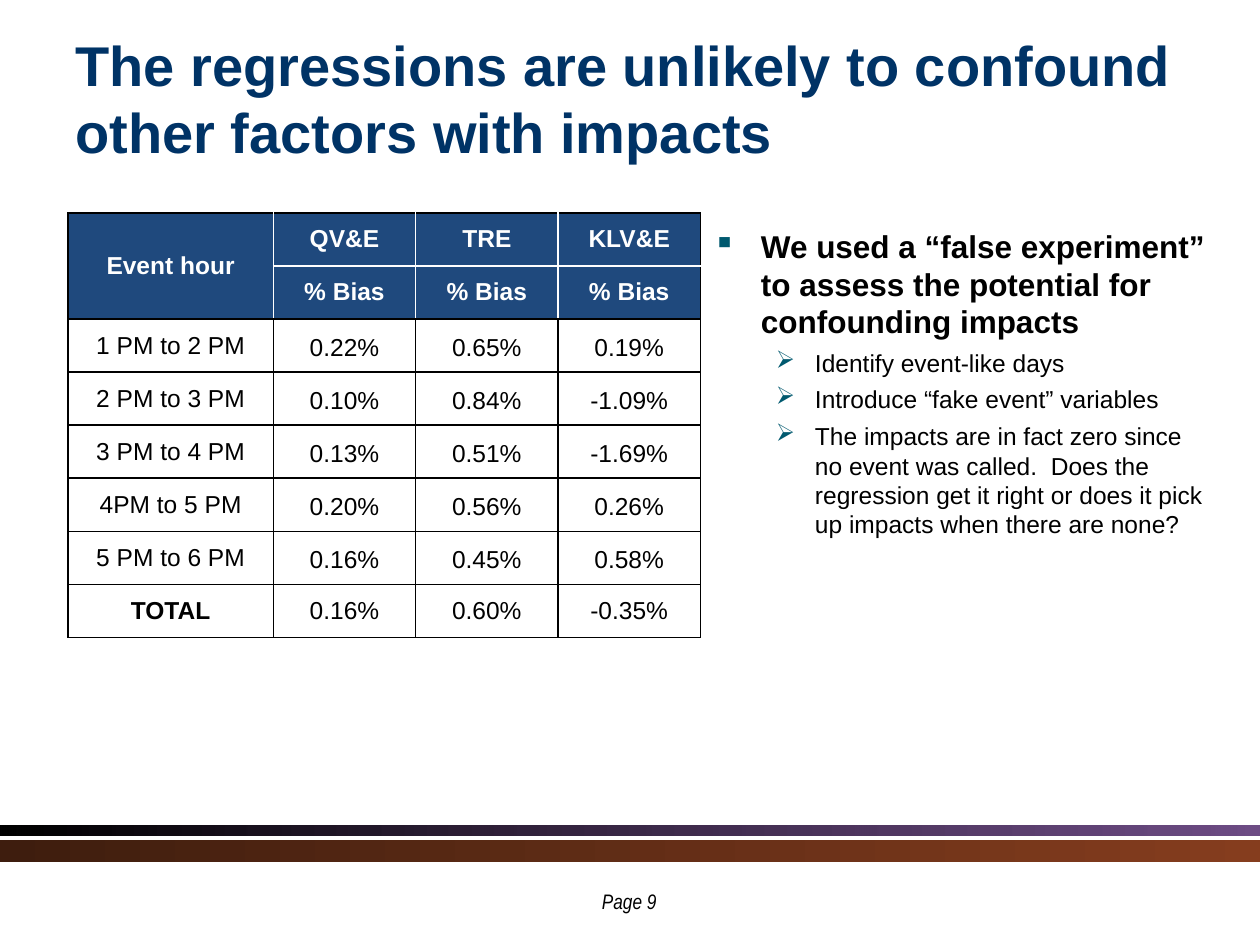
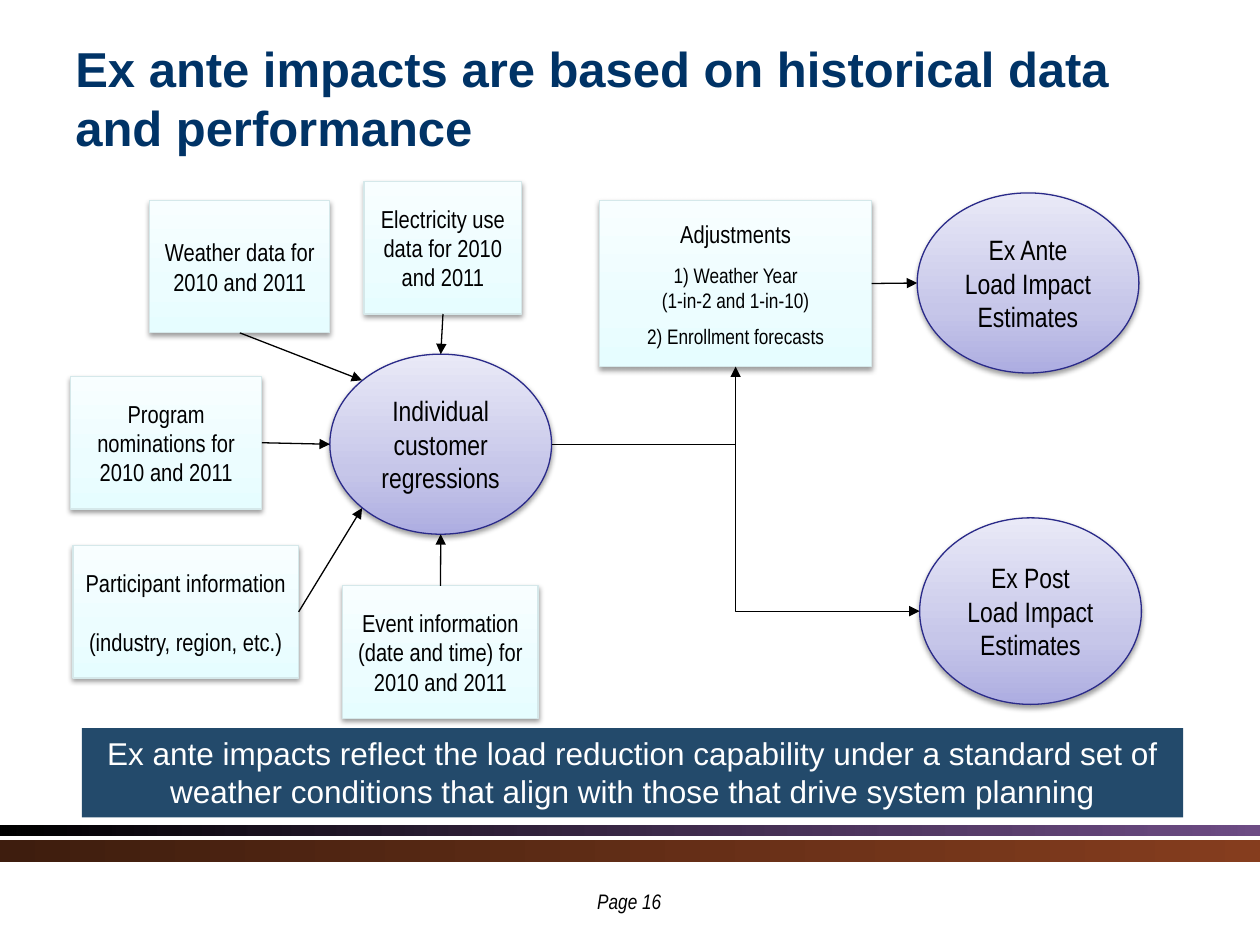
from lxml import etree
from pptx import Presentation
from pptx.dml.color import RGBColor
from pptx.enum.shapes import MSO_CONNECTOR, MSO_SHAPE
from pptx.enum.text import MSO_ANCHOR, PP_ALIGN
from pptx.oxml.ns import qn
from pptx.util import Cm, Pt

RECTANGLE, OVAL = MSO_SHAPE.RECTANGLE, MSO_SHAPE.OVAL
STRAIGHT, ELBOW = MSO_CONNECTOR.STRAIGHT, MSO_CONNECTOR.ELBOW
TOP, MIDDLE = MSO_ANCHOR.TOP, MSO_ANCHOR.MIDDLE
LEFT, CENTER = PP_ALIGN.LEFT, PP_ALIGN.CENTER

COLORS = {
    "black": "000000",
    "white": "FFFFFF",
    "title": "003366",
    "header": "1F497D",
    "bullet": "00596F",
    "banner": "234A6B",
    "box line": "D5E8EA",
    "oval line": "2A2A89",
}
# Gradient stops: position, colour, opacity (all in percent but the colour)
BANDS = [
    (16.64, 0.2, [(0, "000000", 100), (100, "542D6F", 85)]),
    (16.94, 0.43, [(0, "3E1D0E", 100), (100, "853D1E", 100)]),
]
BOX_STOPS = [(0, "E6FDFF", 100), (35, "ECFDFF", 100), (100, "F8FEFF", 100)]
OVAL_STOPS = [(0, "ADADE1", 100), (35, "C6C6E9", 100), (100, "E9E9F7", 100)]


def fill_gradient(shape, stops, angle):
    """Fill with the stops; the angle runs counter-clockwise."""
    shape.fill.gradient()
    shape.fill.gradient_angle = angle
    stop_list = shape._element.spPr.find(qn("a:gradFill")).find(qn("a:gsLst"))
    for old_stop in list(stop_list):
        stop_list.remove(old_stop)
    for position, color, opacity in stops:
        stop = etree.SubElement(stop_list, qn("a:gs"), pos=str(position * 1000))
        rgb = etree.SubElement(stop, qn("a:srgbClr"), val=color)
        if opacity < 100:
            etree.SubElement(rgb, qn("a:alpha"), val=str(opacity * 1000))


def write(frame, lines, size, color="black", font="Arial", bold=False,
          italic=False, align=CENTER, anchor=MIDDLE):
    frame.word_wrap = True
    frame.vertical_anchor = anchor
    for index, line in enumerate(lines):
        paragraph = frame.paragraphs[0] if index == 0 else frame.add_paragraph()
        paragraph.text = line
        paragraph.alignment = align
        paragraph.font.size = Pt(size)
        paragraph.font.name = font
        paragraph.font.bold = bold
        paragraph.font.italic = italic
        paragraph.font.color.rgb = RGBColor.from_string(COLORS[color])


presentation = Presentation()
presentation.slide_width = Cm(25.4)
presentation.slide_height = Cm(19.05)

# Shared bands, titles and page numbers
slides = []
for title, title_size, page in [
    ("The regressions are unlikely to confound other factors with impacts", 32, 9),
    ("Ex ante impacts are based on historical data and performance", 28, 16),
]:
    slide = presentation.slides.add_slide(presentation.slide_layouts[6])
    slides.append(slide)
    for top, height, stops in BANDS:
        band = slide.shapes.add_shape(RECTANGLE, 0, Cm(top), Cm(25.4), Cm(height))
        band.shadow.inherit = False
        band.line.fill.background()
        fill_gradient(band, stops, 0)
    title_box = slide.shapes.add_textbox(Cm(1.27), Cm(0.76), Cm(22.86), Cm(2.41))
    write(title_box.text_frame, [title], title_size, "title", bold=True, align=LEFT)
    footer = slide.shapes.add_textbox(Cm(9.98), Cm(17.78), Cm(5.41), Cm(0.56))
    write(footer.text_frame, [f"Page {page}"], 12, font="Arial Narrow",
          italic=True, anchor=TOP)
bias_slide, flow_slide = slides

# Bias table
BIAS_ROWS = [
    ("Event hour", "QV&E", "TRE", "KLV&E"),
    ("", "% Bias", "% Bias", "% Bias"),
    ("1 PM to 2 PM", "0.22%", "0.65%", "0.19%"),
    ("2 PM to 3 PM", "0.10%", "0.84%", "-1.09%"),
    ("3 PM to 4 PM", "0.13%", "0.51%", "-1.69%"),
    ("4PM to 5 PM", "0.20%", "0.56%", "0.26%"),
    ("5 PM to 6 PM", "0.16%", "0.45%", "0.58%"),
    ("TOTAL", "0.16%", "0.60%", "-0.35%"),
]
HEADER_ROWS = 2
LAST_COLUMN = 3
LAST_ROW = len(BIAS_ROWS) - 1
table = bias_slide.shapes.add_table(
    len(BIAS_ROWS), 4, Cm(1.37), Cm(4.29), Cm(12.75), Cm(8.56)).table
table.first_row = table.horz_banding = False
for column_index, column in enumerate(table.columns):
    column.width = Cm(4.14 if column_index == 0 else 2.87)
for row in table.rows:
    row.height = Cm(1.07)
table.cell(0, 0).merge(table.cell(1, 0))

for row_index, values in enumerate(BIAS_ROWS):
    for column_index, value in enumerate(values):
        cell = table.cell(row_index, column_index)
        in_header = row_index < HEADER_ROWS
        white_sides = {
            "L": in_header and column_index > 0,
            "R": in_header and column_index < LAST_COLUMN,
            "T": row_index == 1 and column_index > 0,
            "B": row_index == 0 and column_index > 0,
        }
        properties = cell._tc.get_or_add_tcPr()
        for side, is_white in white_sides.items():
            border = etree.SubElement(properties, qn(f"a:ln{side}"), w=str(Pt(1)))
            border_fill = etree.SubElement(border, qn("a:solidFill"))
            etree.SubElement(border_fill, qn("a:srgbClr"),
                             val=COLORS["white" if is_white else "black"])
        if in_header:
            cell.fill.solid()
            cell.fill.fore_color.rgb = RGBColor.from_string(COLORS["header"])
        else:
            cell.fill.background()
        cell.margin_left = cell.margin_right = cell.margin_top = cell.margin_bottom = 0
        cell.vertical_anchor = MIDDLE
        if value:
            is_total_label = row_index == LAST_ROW and column_index == 0
            write(cell.text_frame, [value], 14, "white" if in_header else "black",
                  bold=in_header or is_total_label)
        if HEADER_ROWS <= row_index < LAST_ROW and column_index > 0:
            cell.text_frame.paragraphs[0].line_spacing = 1.15

# Explanation beside the table
explanation = bias_slide.shapes.add_textbox(
    Cm(14.12), Cm(4.45), Cm(10.64), Cm(12.57)).text_frame
write(explanation, [
    "We used a “false experiment” to assess the potential for confounding impacts",
    "Identify event-like days",
    "Introduce “fake event” variables",
    "The impacts are in fact zero since no event was called.  Does the regression "
    "get it right or does it pick up impacts when there are none?",
], 14, align=LEFT, anchor=TOP)
for index, paragraph in enumerate(explanation.paragraphs):
    margin, hanging, bullet = (0.97, 0.97, "▪") if index == 0 else (2.06, 0.79, "➢")
    if index == 0:
        paragraph.font.size = Pt(18)
        paragraph.font.bold = True
    else:
        paragraph.space_before = Pt(4.2)
    properties = paragraph._p.get_or_add_pPr()
    properties.set("marL", str(Cm(margin)))
    properties.set("indent", str(-Cm(hanging)))
    bullet_color = etree.Element(qn("a:buClr"))
    etree.SubElement(bullet_color, qn("a:srgbClr"), val=COLORS["bullet"])
    bullet_char = etree.Element(qn("a:buChar"), char=bullet)
    run_defaults = properties.find(qn("a:defRPr"))
    run_defaults.addprevious(bullet_color)
    run_defaults.addprevious(bullet_char)

# Banner under the flow chart
banner = flow_slide.shapes.add_shape(RECTANGLE, Cm(1.65), Cm(14.68), Cm(22.2), Cm(1.8))
banner.shadow.inherit = False
banner.fill.solid()
banner.fill.fore_color.rgb = RGBColor.from_string(COLORS["banner"])
banner.line.fill.background()
write(banner.text_frame, [
    "Ex ante impacts reflect the load reduction capability under a standard set of "
    "weather conditions that align with those that drive system planning",
], 18, "white", anchor=TOP)

# Flow chart nodes: left, top, width, height, lines
NODES = {
    "electricity": (RECTANGLE, 7.34, 3.66, 3.18, 2.67,
                    ["Electricity use data for 2010 and 2011"]),
    "weather": (RECTANGLE, 3.02, 4.04, 3.63, 2.67, ["Weather data for 2010 and 2011"]),
    "event": (RECTANGLE, 6.91, 11.81, 3.94, 2.67,
              ["Event information (date and time) for 2010 and 2011"]),
    "participant": (RECTANGLE, 1.47, 11, 4.55, 2.67,
                    ["Participant information", "(industry, region, etc.)"]),
    "program": (RECTANGLE, 1.42, 7.59, 3.86, 2.67,
                ["Program nominations for 2010 and 2011"]),
    "regressions": (OVAL, 6.65, 7.14, 4.47, 3.63, ["Individual customer regressions"]),
    "adjustments": (RECTANGLE, 12.09, 4.04, 5.48, 3.35,
                    ["Adjustments", "1) Weather Year", "(1-in-2 and 1-in-10)",
                     "2) Enrollment forecasts"]),
    "ex ante": (OVAL, 18.49, 3.89, 4.47, 3.63, ["Ex Ante Load Impact Estimates"]),
    "ex post": (OVAL, 18.54, 10.44, 4.47, 3.76, ["Ex Post Load Impact Estimates"]),
}
nodes = {}
for name, (kind, left, top, width, height, lines) in NODES.items():
    node = flow_slide.shapes.add_shape(kind, Cm(left), Cm(top), Cm(width), Cm(height))
    nodes[name] = node
    is_oval = kind == OVAL
    fill_gradient(node, OVAL_STOPS if is_oval else BOX_STOPS, 90)
    node.line.color.rgb = RGBColor.from_string(
        COLORS["oval line" if is_oval else "box line"])
    node.line.width = Pt(0.75)
    node.shadow.inherit = False
    shadow = etree.SubElement(
        node._element.spPr.find(qn("a:effectLst")), qn("a:outerShdw"),
        blurRad=str(Pt(3.1)), dist=str(Pt(1.6)), dir="5400000", rotWithShape="0")
    shadow_color = etree.SubElement(shadow, qn("a:srgbClr"), val=COLORS["black"])
    etree.SubElement(shadow_color, qn("a:alpha"), val="38000")
    if not is_oval:
        node.text_frame.margin_left = node.text_frame.margin_right = Cm(0.2)
    write(node.text_frame, lines, 16 if is_oval else 14, font="Arial Narrow")

nodes["participant"].text_frame.paragraphs[1].space_before = Pt(17)
adjustment_lines = nodes["adjustments"].text_frame.paragraphs
for paragraph, size, space_after in zip(adjustment_lines, (14, 12, 12, 12), (8, 0, 6, 6)):
    paragraph.font.size = Pt(size)
    paragraph.space_after = Pt(space_after)

# Arrows: a point on an oval is given by its direction from the centre
DIAGONAL = 0.71
ARROWS = [
    ("electricity", 2, "regressions", 0, -1),
    ("weather", 2, "regressions", -DIAGONAL, -DIAGONAL),
    ("program", 3, "regressions", -1, 0),
    ("participant", 3, "regressions", -DIAGONAL, DIAGONAL),
    ("event", 0, "regressions", 0, 1),
    ("adjustments", 3, "ex ante", -1, 0),
]
connectors = []
for source, side, target, across, down in ARROWS:
    oval = nodes[target]
    end_x = oval.left + int(oval.width * (1 + across) / 2)
    end_y = oval.top + int(oval.height * (1 + down) / 2)
    connector = flow_slide.shapes.add_connector(STRAIGHT, 0, 0, end_x, end_y)
    connector.begin_connect(nodes[source], side)
    connectors.append(connector)

regressions, adjustments, ex_post = (
    nodes[name] for name in ("regressions", "adjustments", "ex post"))
fork_x = regressions.left + regressions.width
fork_y = regressions.top + regressions.height // 2
to_adjustments = flow_slide.shapes.add_connector(
    ELBOW, fork_x, fork_y, adjustments.left + adjustments.width // 2,
    adjustments.top + adjustments.height)
to_adjustments._element.spPr.find(qn("a:prstGeom")).set("prst", "bentConnector2")
to_ex_post = flow_slide.shapes.add_connector(
    ELBOW, fork_x, fork_y, ex_post.left, ex_post.top + ex_post.height // 2)

for connector in connectors + [to_adjustments, to_ex_post]:
    connector.line.color.rgb = RGBColor.from_string(COLORS["black"])
    connector.line.width = Pt(0.75)
    etree.SubElement(connector.line._get_or_add_ln(), qn("a:tailEnd"), type="triangle")
    etree.SubElement(connector._element.spPr, qn("a:effectLst"))

presentation.save("out.pptx")
